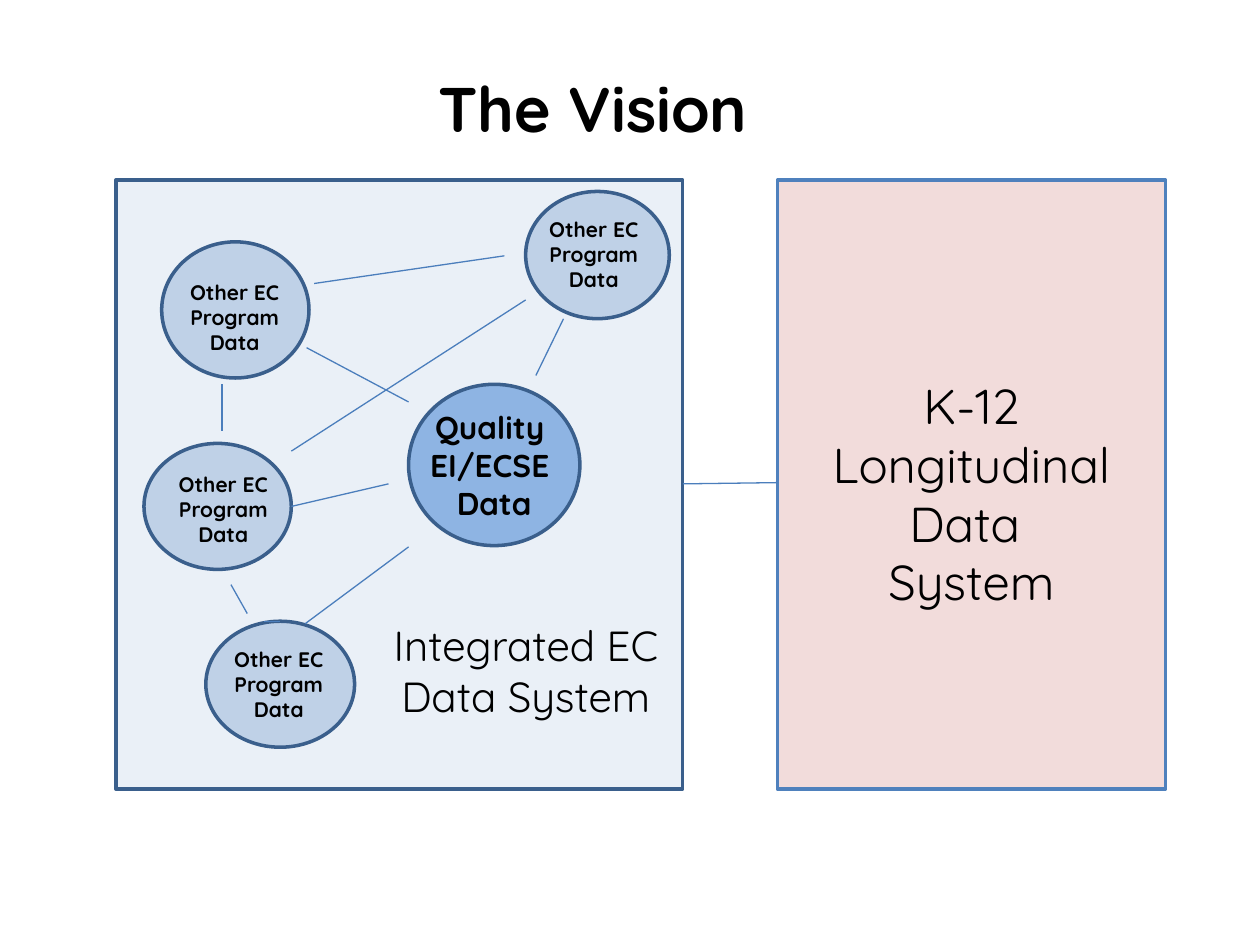
from lxml import etree
from pptx import Presentation
from pptx import util as u
from pptx.dml import color
from pptx.enum import shapes, text
from pptx.oxml import ns

COLORS = {
    "ink": "000000",
    "outline": "3A5F8C",
    "link": "4B7EBC",
    "early_panel": "EAF0F7",
    "hub": "8EB4E3",
    "program": "BFD1E7",
    "school_panel": "F2DCDB",
    "school_outline": "4F81BD",
}
TITLE = {"size": u.Pt(36), "bold": True}
SCHOOL = {"size": u.Pt(28), "bold": False}
SYSTEM = {"size": u.Pt(24), "bold": False}
HUB = {"size": u.Pt(18), "bold": True}
PROGRAM = {"size": u.Pt(12), "bold": True}

PROGRAMS = [
    ((26.2, 35.2, 84.2, 77.8), (34.8, 53.2)),
    ((51.4, 252, 85, 72), (60, 262.8)),
    ((234.2, 6.4, 82.1, 72.7), (240, 17.2)),
    ((16.1, 150.4, 84.2, 72), (28.3, 162.7)),
]
LINKS = [
    (109, 95.7, 167.3, 126.7),
    (100.3, 186.4, 155.8, 173.5),
    (108.2, 253.4, 167.3, 209.5),
    (240, 111.6, 255.8, 79.2),
    (113.3, 59, 222, 43.2),
    (60.7, 116.6, 60.7, 143.2),
    (93.8, 252, 84.5, 252),
    (65.8, 231.1, 75.1, 247.6),
    (100.3, 154.8, 234.2, 68.4),
]


def rgb(name):
    return color.RGBColor.from_string(COLORS[name])


def points(values):
    return [u.Pt(value) for value in values]


def inside(area, part):
    return (area[0] + part[0], area[1] + part[1], *part[2:])


def write(box, lines, look, side=7.2):
    frame = box.text_frame
    settings = {
        "word_wrap": True,
        "auto_size": text.MSO_AUTO_SIZE.NONE,
        "vertical_anchor": text.MSO_ANCHOR.TOP,
        "margin_left": u.Pt(side),
        "margin_right": u.Pt(side),
        "margin_top": u.Pt(3.6),
        "margin_bottom": u.Pt(3.6),
    }
    for name, value in settings.items():
        setattr(frame, name, value)
    for index, line in enumerate(lines):
        para = frame.add_paragraph() if index else frame.paragraphs[0]
        para.alignment = text.PP_ALIGN.CENTER
        span = para.add_run()
        span.text = line
        for name, value in {"name": "Quicksand", **look}.items():
            setattr(span.font, name, value)
        span.font.color.rgb = rgb("ink")


def add_label(page, area, lines, look, side=7.2):
    write(page.shapes.add_textbox(*points(area)), lines, look, side)


def add_figure(page, kind, area, fill, outline="outline"):
    figure = page.shapes.add_shape(kind, *points(area))
    figure.shadow.inherit = False
    figure.fill.solid()
    figure.fill.fore_color.rgb = rgb(fill)
    figure.line.color.rgb = rgb(outline)
    figure.line.width = u.Pt(2)


def add_link(page, ends):
    link = page.shapes.add_connector(shapes.MSO_CONNECTOR.STRAIGHT, *points(ends))
    link.line.color.rgb = rgb("link")
    link.line.width = u.Pt(0.75)
    etree.SubElement(link._element.spPr, ns.qn("a:effectLst"))


def add_title(page, area):
    title = page.shapes.title
    for name, value in zip(("left", "top", "width", "height"), points(area)):
        setattr(title, name, value)
    write(title, ["The Vision"], TITLE)


def add_early_system(page, area):
    oval = shapes.MSO_SHAPE.OVAL
    add_figure(page, shapes.MSO_SHAPE.RECTANGLE, area, "early_panel")
    add_figure(page, oval, inside(area, (167.3, 116.6, 97.9, 92.2)), "hub")
    add_label(page, inside(area, (126.2, 126.7, 180, 72.7)),
              ["Quality ", "EI/ECSE ", "Data"], HUB)
    for circle, corner in PROGRAMS:
        add_figure(page, oval, inside(area, circle), "program")
        add_label(page, inside(area, (*corner, 66.2, 51.1)),
                  ["Other EC Program", "Data"], PROGRAM, side=3.6)
    for x1, y1, x2, y2 in LINKS:
        add_link(page, inside(area, (x1, y1)) + inside(area, (x2, y2)))
    add_label(page, inside(area, (149.3, 247.6, 169.9, 94.3)),
              ["Integrated EC Data System"], SYSTEM)


def add_school_system(page, area):
    add_figure(page, shapes.MSO_SHAPE.RECTANGLE, area, "school_panel", "school_outline")
    add_label(page, inside(area, (18, 108, 185.8, 143.3)),
              ["K-12 Longitudinal Data ", "System"], SCHOOL)


def main():
    deck = Presentation()
    deck.slide_width, deck.slide_height = points((720, 540))
    page = deck.slides.add_slide(deck.slide_layouts[5])
    early = (66.2, 103, 324, 347.8)
    school = (444.2, 103, 221.8, 347.8)
    add_title(page, (136.8, 36, 403.9, 51.1))
    add_early_system(page, early)
    add_school_system(page, school)
    add_link(page, (early[0] + early[2], 276.5, school[0], 275.8))
    deck.save("out.pptx")


if __name__ == "__main__":
    main()
